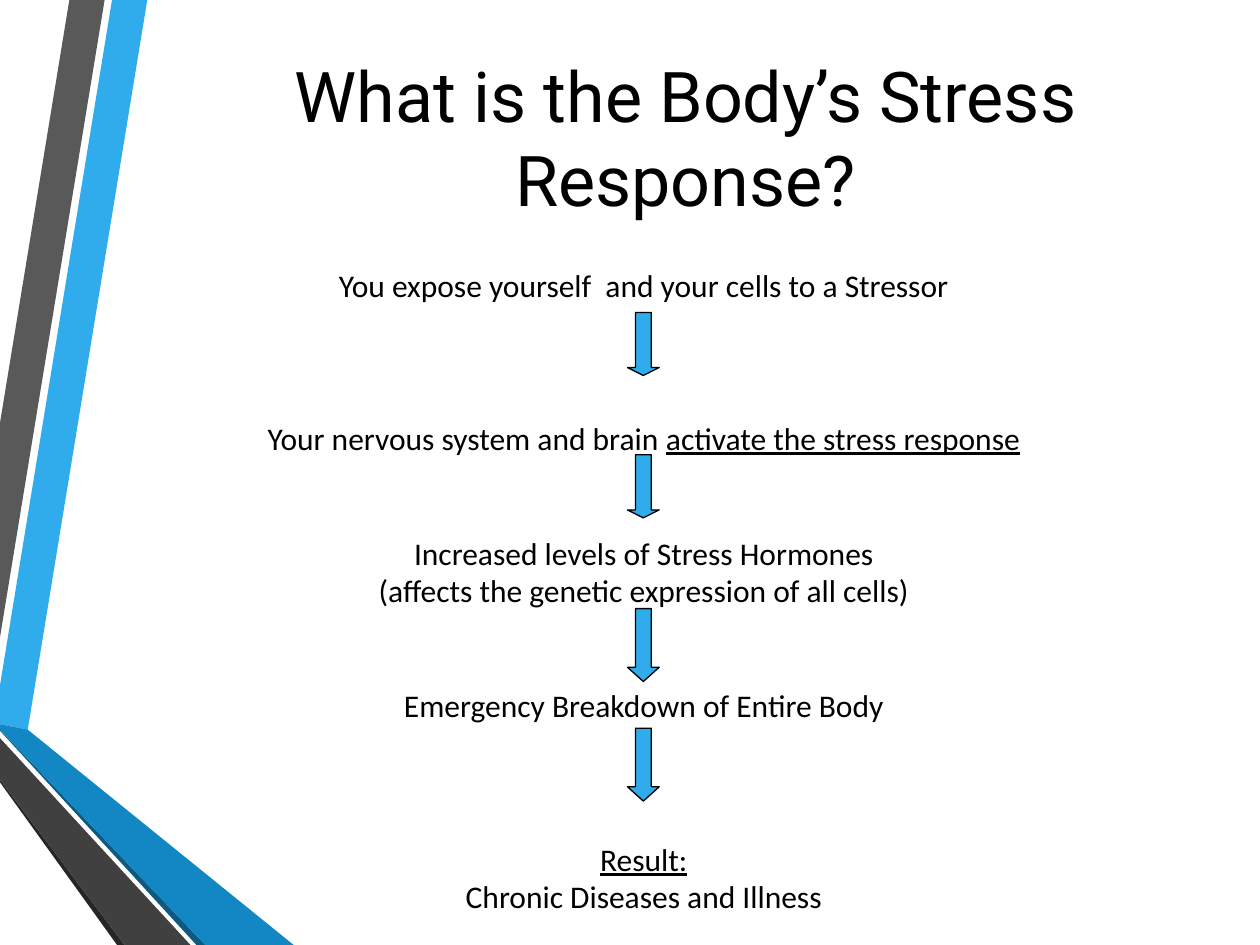
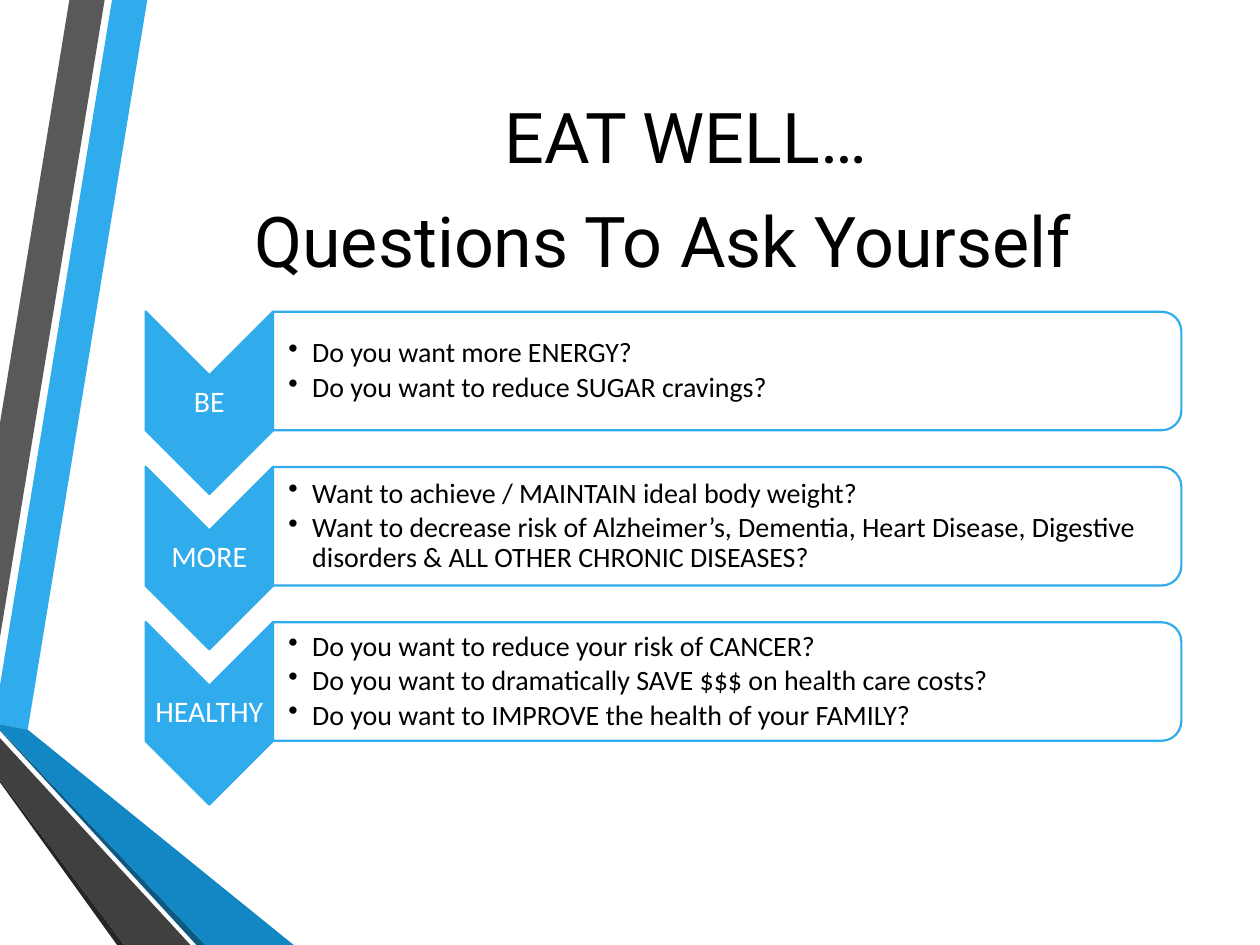
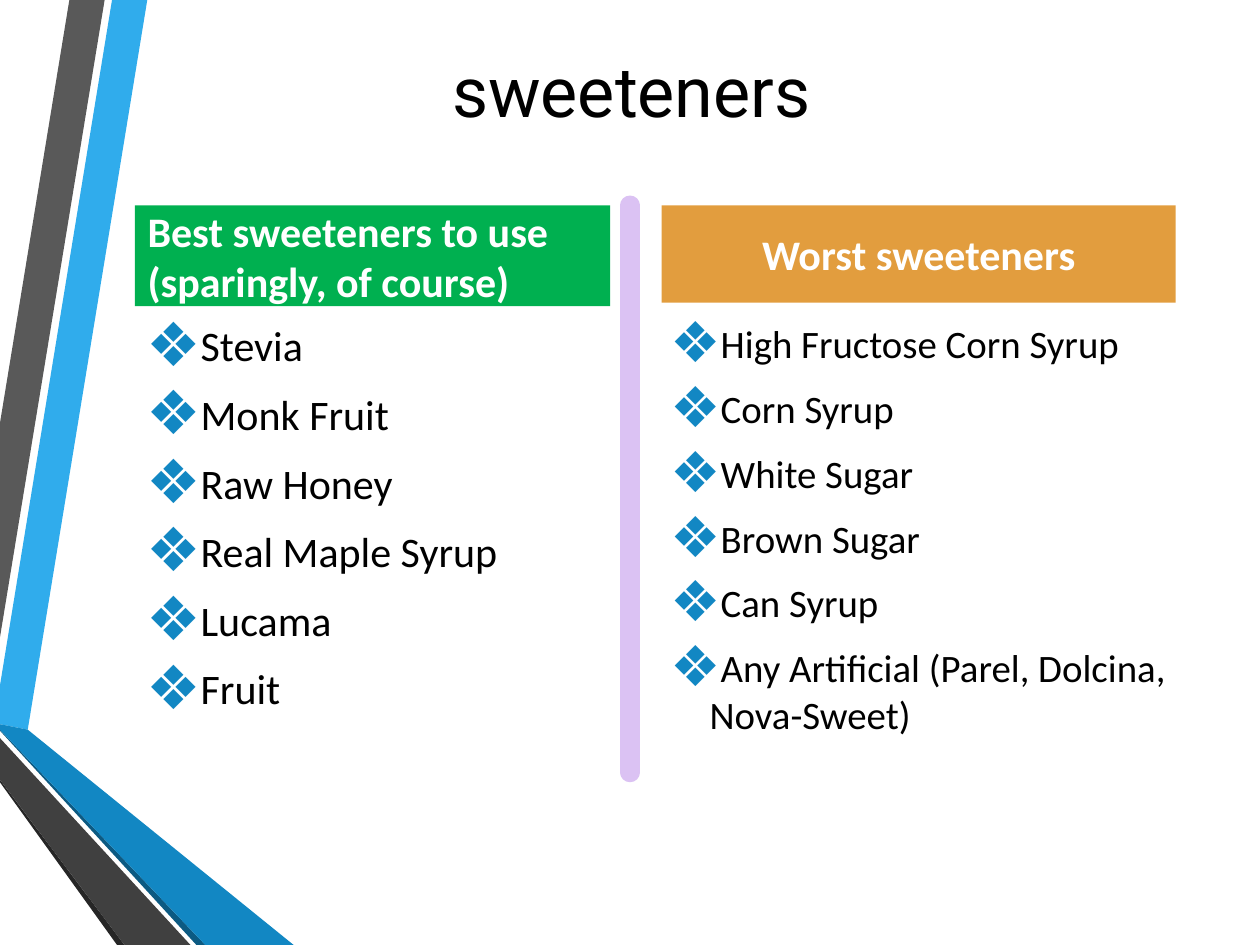
from lxml.etree import SubElement
from pptx import Presentation
from pptx.dml.color import RGBColor
from pptx.enum.shapes import MSO_CONNECTOR, MSO_SHAPE
from pptx.enum.text import MSO_ANCHOR, MSO_AUTO_SIZE, PP_ALIGN
from pptx.oxml.ns import qn
from pptx.util import Cm, Pt

BLACK, WHITE, SKY, OCEAN = "000000", "FFFFFF", "30ACEC", "1287C3"
GREEN, ORANGE, LILAC = "00B050", "E29D3E", "DBC2F3"

BANDS = [
    (SKY, [(0, 13.82), (0, 14.6), (0.56, 14.71), (2.97, 0), (2.26, 0)]),
    ("595959", [(2.11, 0), (1.4, 0), (0, 8.53), (0, 12.85)]),
    ("262626", [(0, 15.72), (0, 15.77), (2.36, 19.05), (2.51, 19.05)]),
    ("0C5A82", [(0, 14.71), (0, 14.73), (3.96, 19.05), (4.14, 19.05)]),
    (OCEAN, [(0, 14.71), (4.14, 19.05), (5.92, 19.05), (0.56, 14.71), (0, 14.6)]),
    ("404040", [(0, 15.72), (2.51, 19.05), (3.84, 19.05), (0, 14.88)]),
]

TITLE = {
    "font": {"name": "Roboto", "size": Pt(40)},
    "paragraph": {"alignment": PP_ALIGN.CENTER},
}
FLOW = {
    "font": {"name": "Calibri", "size": Pt(18)},
    "paragraph": {"alignment": PP_ALIGN.CENTER},
}
LABEL = {
    "font": {"name": "Calibri", "size": Pt(17)},
    "paragraph": {"alignment": PP_ALIGN.CENTER, "line_spacing": 0.9},
    "colour": WHITE,
}
QUESTION = {
    "font": {"name": "Calibri", "size": Pt(16)},
    "paragraph": {"line_spacing": 0.9, "space_after": Pt(2.4)},
    "bullet": {"character": "•", "indent": 0.48, "percent": 100, "colour": BLACK},
}
HEADING = {
    "font": {"name": "Calibri", "size": Pt(24), "bold": True},
    "paragraph": {},
    "colour": WHITE,
}
SWEETENER = {
    "font": {"name": "Calibri"},
    "paragraph": {"space_after": Pt(6)},
    "space_before": 4.4,
    "bullet": {"character": "❖", "indent": 0.79, "percent": 145, "colour": OCEAN},
}

FLOW_LINE = 22
FLOW_STEPS = [
    (0, [("You expose yourself  and your cells to a Stressor", False)]),
    (3, [("Your nervous system and brain ", False), ("activate the stress response", True)]),
    (2, [("Increased levels of Stress Hormones", False)]),
    (0, [("(affects the genetic expression of all cells)", False)]),
    (2, [("Emergency Breakdown of Entire Body", False)]),
    (3, [("Result:", True)]),
    (0, [("Chronic Diseases and Illness", False)]),
]
FLOW_ARROWS = [(6.3, 1.27, 0.25), (9.17, 1.27, 0.25), (12.27, 1.47, 0.45), (14.68, 1.47, 0.45)]

QUESTIONS = [
    ("BE", ["Do you want more ENERGY?", "Do you want to reduce SUGAR cravings?"]),
    ("MORE", [
        "Want to achieve / MAINTAIN ideal body weight?",
        "Want to decrease risk of Alzheimer’s, Dementia, Heart Disease, "
        "Digestive disorders & ALL OTHER CHRONIC DISEASES?",
    ]),
    ("HEALTHY", [
        "Do you want to reduce your risk of CANCER?",
        "Do you want to dramatically SAVE $$$ on health care costs?",
        "Do you want to IMPROVE the health of your FAMILY?",
    ]),
]

SWEETENERS = [
    {
        "heading": "Best sweeteners to use (sparingly, of course)",
        "fill": GREEN,
        "alignment": PP_ALIGN.LEFT,
        "heading_box": (2.72, 4.14, 9.58, 2.03),
        "list_box": (2.69, 6.32, 9.58, 8.64),
        "size": 24,
        "items": ["Stevia", "Monk Fruit", "Raw Honey", "Real Maple Syrup", "Lucama", "Fruit"],
    },
    {
        "heading": "Worst sweeteners",
        "fill": ORANGE,
        "alignment": PP_ALIGN.CENTER,
        "heading_box": (13.34, 4.14, 10.36, 1.96),
        "list_box": (13.26, 6.32, 12.14, 8.64),
        "size": 22.2,
        "items": [
            "High Fructose Corn Syrup", "Corn Syrup", "White Sugar", "Brown Sugar",
            "Can Syrup", "Any Artificial (Parel, Dolcina, Nova-Sweet)",
        ],
    },
]


def colour(value):
    return RGBColor.from_string(value)


def set_all(target, values):
    for name, value in values.items():
        setattr(target, name, value)


def place(shape, box):
    set_all(shape, dict(zip(("left", "top", "width", "height"), map(Cm, box))))


def centred_box(centre_x, centre_y, width, height):
    return centre_x - width / 2, centre_y - height / 2, width, height


def add_bullet(paragraph, bullet):
    properties = paragraph._p.get_or_add_pPr()
    indent = Cm(bullet["indent"])
    properties.set("marL", str(indent))
    properties.set("indent", str(-indent))
    bullet_colour = SubElement(properties, qn("a:buClr"))
    SubElement(bullet_colour, qn("a:srgbClr"), val=bullet["colour"])
    SubElement(properties, qn("a:buSzPct"), val=str(bullet["percent"] * 1000))
    SubElement(properties, qn("a:buChar"), char=bullet["character"])


def write(shape, paragraphs, style, anchor=MSO_ANCHOR.TOP, gaps=None):
    frame = shape.text_frame
    set_all(frame, {"word_wrap": True, "auto_size": MSO_AUTO_SIZE.NONE, "vertical_anchor": anchor})
    for number, runs in enumerate(paragraphs):
        paragraph = frame.add_paragraph() if number else frame.paragraphs[0]
        gap = gaps[number] if gaps else style.get("space_before", 0)
        if "bullet" in style:
            add_bullet(paragraph, style["bullet"])
        set_all(paragraph, {"space_before": Pt(gap if number else 0), **style["paragraph"]})
        for text, underlined in [(runs, False)] if isinstance(runs, str) else runs:
            run = paragraph.add_run()
            run.text = text
            set_all(run.font, {**style["font"], "underline": underlined})
            run.font.color.rgb = colour(style.get("colour", BLACK))


def add_text(slide, box, paragraphs, style, insets=None, **options):
    shape = slide.shapes.add_textbox(*map(Cm, box))
    if insets:
        names = ("margin_left", "margin_top", "margin_right", "margin_bottom")
        set_all(shape.text_frame, dict(zip(names, map(Cm, insets))))
    write(shape, paragraphs, style, **options)


def add_figure(slide, kind, box, fill, line, width, rotation=0):
    shape = slide.shapes.add_shape(kind, *map(Cm, box))
    shape.rotation = rotation
    shape.shadow.inherit = False
    shape.fill.solid()
    shape.fill.fore_color.rgb = colour(fill)
    shape.line.color.rgb = colour(line)
    shape.line.width = Pt(width)
    return shape


def add_titled_slide(presentation, layout, title, box, anchor=MSO_ANCHOR.MIDDLE):
    slide = presentation.slides.add_slide(presentation.slide_layouts[layout])
    place(slide.shapes.title, box)
    write(slide.shapes.title, [title], TITLE, anchor)
    return slide


def move_bands_to_master(presentation, slide):
    tree = presentation.slide_master.shapes.element
    for number, (fill, points) in enumerate(BANDS):
        start, *others = [(Cm(x), Cm(y)) for x, y in points]
        builder = slide.shapes.build_freeform(*start)
        builder.add_line_segments(others, close=True)
        band = builder.convert_to_shape()
        band.shadow.inherit = False
        band.fill.solid()
        band.fill.fore_color.rgb = colour(fill)
        band.line.fill.background()
        band.element.xpath(".//p:cNvPr")[0].set("id", str(100 + number))
        tree.insert(2 + number, band.element)


def build_stress_slide(presentation):
    slide = add_titled_slide(
        presentation, 5, "What is the Body’s Stress Response?", (2.24, 0, 23.16, 5.51))
    move_bands_to_master(presentation, slide)
    add_text(slide, (4.93, 5.23, 16.1, 13.8), [runs for _, runs in FLOW_STEPS], FLOW,
             gaps=[lines * FLOW_LINE for lines, _ in FLOW_STEPS])
    for top, height, head in FLOW_ARROWS:
        arrow = add_figure(slide, MSO_SHAPE.DOWN_ARROW, (12.65, top, 0.64, height), SKY, BLACK, 0.75)
        arrow.adjustments[1] = head


def build_questions_slide(presentation):
    slide = add_titled_slide(presentation, 5, "EAT WELL…", (2.24, 0.91, 23.16, 3.63))
    add_text(slide, (2.92, 3.86, 20.88, 1.52), ["Questions To Ask Yourself"], TITLE)
    for row, (label, questions) in enumerate(QUESTIONS):
        panel_y = 7.48 + 3.13 * row
        chevron_y = panel_y + 0.64
        add_figure(slide, MSO_SHAPE.CHEVRON, centred_box(4.22, chevron_y, 3.68, 2.57),
                   SKY, SKY, 1.25, 90)
        add_text(slide, centred_box(4.22, chevron_y, 2.57, 1.09), [label], LABEL,
                 (0.03, 0.03, 0.03, 0.03), anchor=MSO_ANCHOR.MIDDLE)
        panel = add_figure(slide, MSO_SHAPE.ROUND_2_SAME_RECTANGLE,
                           centred_box(14.66, panel_y, 2.39, 18.31), WHITE, SKY, 1.25, 90)
        fill_colour = panel.element.spPr.find(qn("a:solidFill")).find(qn("a:srgbClr"))
        SubElement(fill_colour, qn("a:alpha"), val="90000")
        add_text(slide, centred_box(14.62, panel_y, 18.21, 2.16), questions, QUESTION,
                 (0.3, 0.03, 0.03, 0.03), anchor=MSO_ANCHOR.MIDDLE)


def build_sweeteners_slide(presentation):
    slide = add_titled_slide(
        presentation, 4, "sweeteners", (2.29, 0.84, 20.88, 1.52), MSO_ANCHOR.TOP)
    placeholders = list(slide.placeholders)[1:]
    for column, heading, items in zip(SWEETENERS, placeholders[::2], placeholders[1::2]):
        place(heading, column["heading_box"])
        heading.fill.solid()
        heading.fill.fore_color.rgb = colour(column["fill"])
        heading_style = {**HEADING, "paragraph": {"alignment": column["alignment"]}}
        write(heading, [column["heading"]], heading_style, MSO_ANCHOR.MIDDLE)
        place(items, column["list_box"])
        list_style = {**SWEETENER, "font": {**SWEETENER["font"], "size": Pt(column["size"])}}
        write(items, column["items"], list_style)
    divider = slide.shapes.add_connector(
        MSO_CONNECTOR.STRAIGHT, Cm(12.7), Cm(4.14), Cm(12.7), Cm(15.57))
    divider.line.color.rgb = colour(LILAC)
    divider.line.width = Pt(11.25)
    properties = divider.element.spPr
    properties.find(qn("a:ln")).set("cap", "rnd")
    SubElement(properties, qn("a:effectLst"))


def main():
    presentation = Presentation()
    set_all(presentation, {"slide_width": Cm(25.4), "slide_height": Cm(19.05)})
    build_stress_slide(presentation)
    build_questions_slide(presentation)
    build_sweeteners_slide(presentation)
    presentation.save("out.pptx")


if __name__ == "__main__":
    main()
